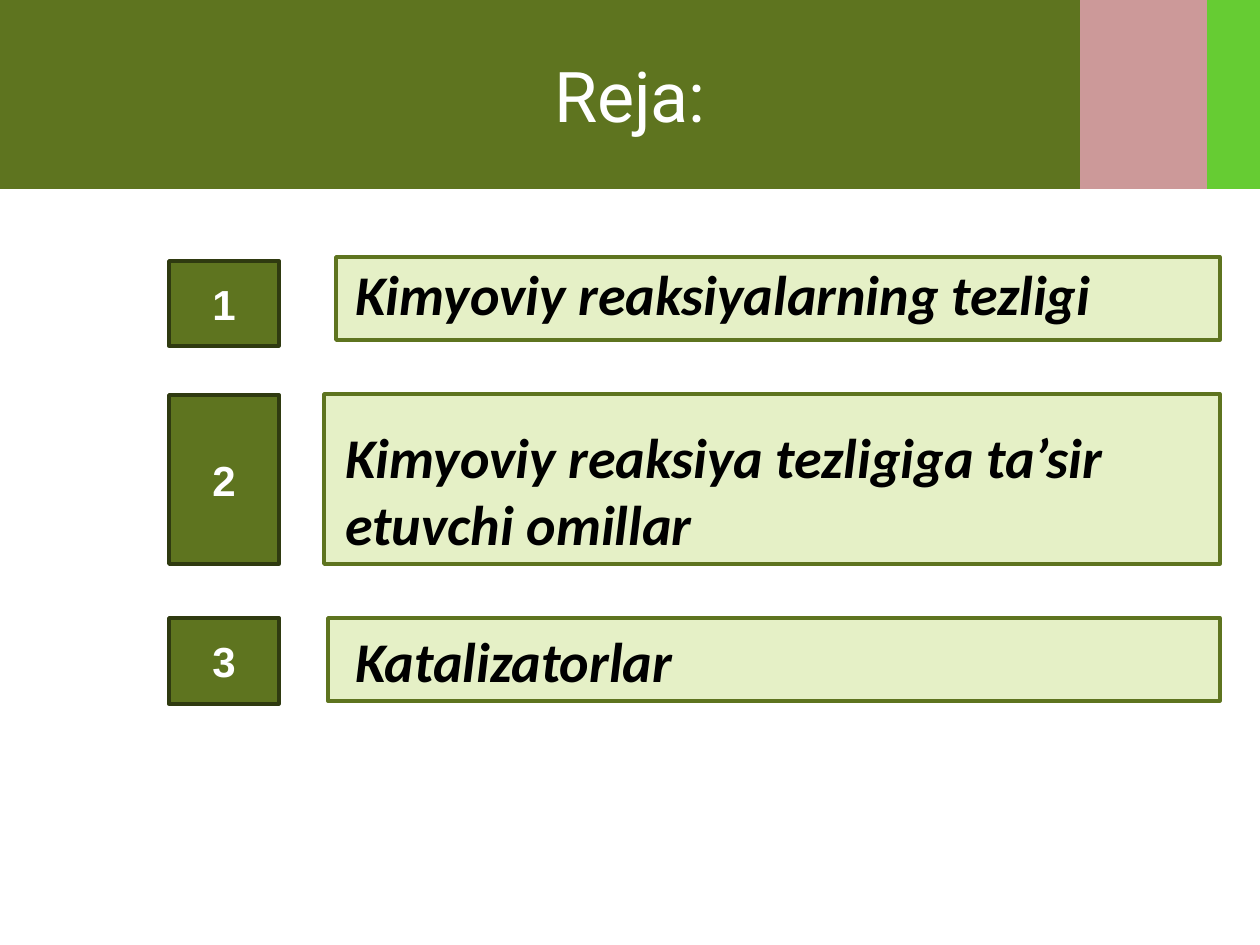
from pptx import Presentation
from pptx.dml.color import RGBColor
from pptx.enum.shapes import MSO_SHAPE
from pptx.enum.text import MSO_ANCHOR, PP_ALIGN
from pptx.util import Emu, Pt

SCALE = 914400 / 126
OLIVE, DARK, PALE = "5E741F", "2F3A10", "E5F0C6"
WHITE, BLACK = "FFFFFF", "000000"

BANDS = [(1188, 72, "66CC33"), (1075, 132, "CC9999"), (0, 1080, OLIVE)]
NUM_LEFT, NUM_WIDTH, BAR_RIGHT = 169, 110, 1220

# number top and height, bar left, top and height, text box, wording
ITEMS = [
    (261, 85, 336, 257, 83, (343, 253, 838, 81),
     "Kimyoviy reaksiyalarning tezligi"),
    (395, 169, 324, 394, 170, (333, 416, 822, 149),
     "Kimyoviy reaksiya tezligiga ta’sir etuvchi omillar"),
    (618, 86, 328, 618, 83, (343, 620, 630, 81),
     "Katalizatorlar"),
]


def px(n):
    return Emu(round(n * SCALE))


def color(code):
    return RGBColor.from_string(code)


def add_rect(slide, box, fill, line=None):
    rect = slide.shapes.add_shape(MSO_SHAPE.RECTANGLE, *map(px, box))
    rect.shadow.inherit = False
    rect.fill.solid()
    rect.fill.fore_color.rgb = color(fill)
    if line:
        rect.line.color.rgb = color(line)
        rect.line.width = Pt(2)
    else:
        rect.line.fill.background()
    return rect


def write(shape, text, font, size, code, bold=False, italic=False,
          align=PP_ALIGN.LEFT, anchor=MSO_ANCHOR.TOP):
    frame = shape.text_frame
    frame.word_wrap = True
    frame.vertical_anchor = anchor
    para = frame.paragraphs[0]
    para.alignment = align
    run = para.add_run()
    run.text = text
    run.font.name = font
    run.font.size = Pt(size)
    run.font.bold = bold
    run.font.italic = italic
    run.font.color.rgb = color(code)


def add_header(slide):
    for left, width, fill in BANDS:
        band = add_rect(slide, (left, 0, width, 189), fill)
    title = slide.shapes.title
    title.left, title.top, title.width, title.height = map(
        px, (63, 10, 1134, 168))
    write(title, "Reja:", "Roboto", 40, WHITE,
          align=PP_ALIGN.CENTER, anchor=MSO_ANCHOR.MIDDLE)
    # The title must lie above the bands
    band._element.addnext(title._element)


def add_item(slide, num, item):
    num_top, num_high, left, top, high, box, text = item
    add_rect(slide, (left, top, BAR_RIGHT - left, high), PALE, OLIVE)
    badge = add_rect(slide, (NUM_LEFT, num_top, NUM_WIDTH, num_high),
                     OLIVE, DARK)
    write(badge, str(num), "Arial", 24, WHITE, bold=True,
          align=PP_ALIGN.CENTER, anchor=MSO_ANCHOR.MIDDLE)
    label = slide.shapes.add_textbox(*map(px, box))
    write(label, text, "Calibri", 32, BLACK, bold=True, italic=True)


def main():
    deck = Presentation()
    deck.slide_width, deck.slide_height = px(1260), px(945)
    slide = deck.slides.add_slide(deck.slide_layouts[5])
    add_header(slide)
    for num, item in enumerate(ITEMS, 1):
        add_item(slide, num, item)
    deck.save("out.pptx")


if __name__ == "__main__":
    main()
